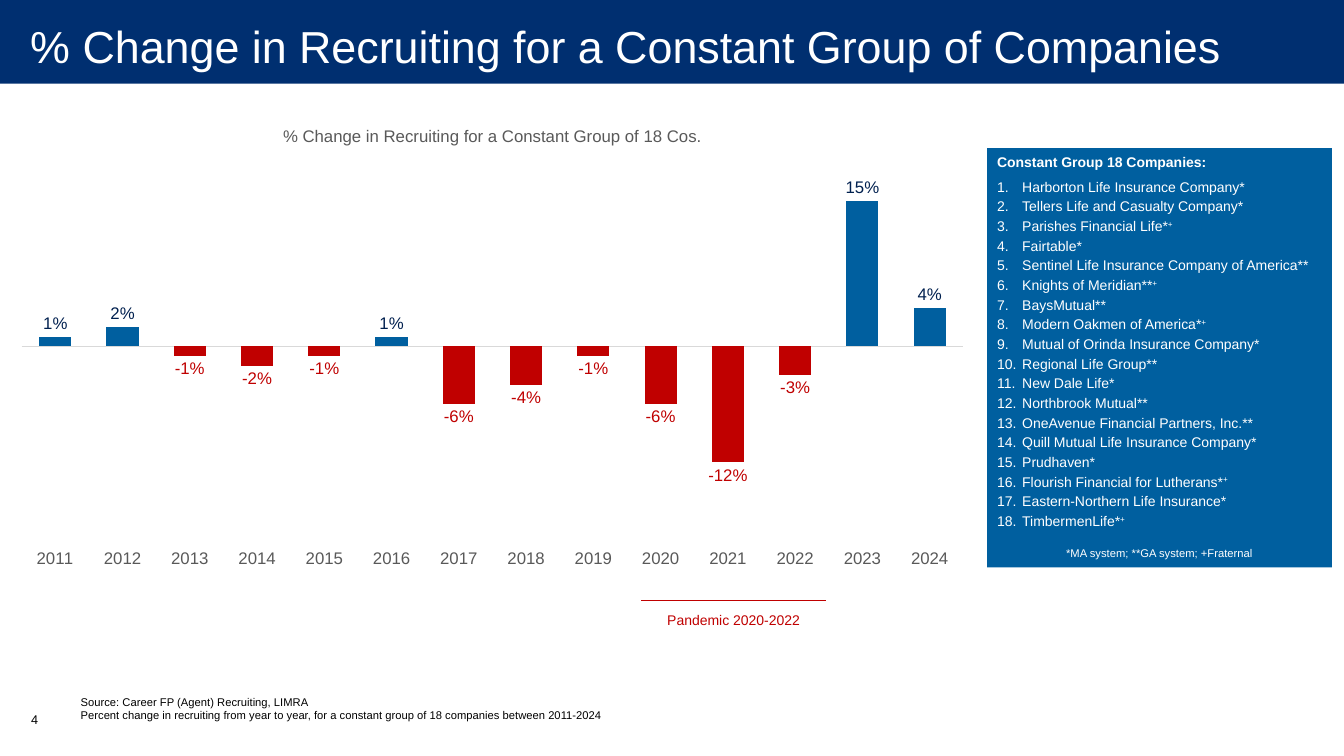
from lxml.etree import SubElement
from pptx import Presentation
from pptx.chart.data import CategoryChartData
from pptx.dml.color import RGBColor
from pptx.enum.chart import XL_CHART_TYPE, XL_LABEL_POSITION, XL_TICK_LABEL_POSITION, XL_TICK_MARK
from pptx.enum.shapes import MSO_CONNECTOR, MSO_SHAPE
from pptx.enum.text import MSO_ANCHOR, MSO_AUTO_SIZE, PP_ALIGN
from pptx.oxml import parse_xml
from pptx.oxml.ns import nsdecls, qn
from pptx.util import Inches, Pt

COLORS = {"navy": "002F70", "blue": "005F9F", "red": "C00000", "ink": "00204F",
          "gray": "595959", "rule": "D9D9D9", "white": "FFFFFF", "black": "000000"}
CHART_TITLE = "% Change in Recruiting for a Constant Group of 18 Cos."
FIRST_YEAR = 2011
CHANGES = [0.01, 0.02, -0.01, -0.02, -0.01, 0.01, -0.06,
           -0.04, -0.01, -0.06, -0.12, -0.03, 0.15, 0.04]
COMPANIES = [
    "Harborton Life Insurance Company*", "Tellers Life and Casualty Company*",
    "Parishes Financial Life*+", "Fairtable*",
    "Sentinel Life Insurance Company of America**", "Knights of Meridian**+",
    "BaysMutual**", "Modern Oakmen of America*+",
    "Mutual of Orinda Insurance Company*", "Regional Life Group**",
    "New Dale Life*", "Northbrook Mutual**",
    "OneAvenue Financial Partners, Inc.**", "Quill Mutual Life Insurance Company*",
    "Prudhaven*", "Flourish Financial for Lutherans*+",
    "Eastern-Northern Life Insurance*", "TimbermenLife*+",
]
SOURCE_LINES = [
    "Source: Career FP (Agent) Recruiting, LIMRA",
    "Percent change in recruiting from year to year, for a constant group of 18 companies between 2011-2024",
]


def color(name):
    """Return the named colour."""
    return RGBColor.from_string(COLORS[name])


def style(font, size, name, bold=False):
    """Set typeface, size, colour and weight."""
    font.name, font.size, font.bold = "Arial", Pt(size), bold
    font.color.rgb = color(name)


def place(shape, left, top, width, height):
    """Move and size a shape, in inches."""
    shape.left, shape.top = Inches(left), Inches(top)
    shape.width, shape.height = Inches(width), Inches(height)


def add_panel(page, left, top, width, height, fill):
    """Add a plain filled rectangle."""
    panel = page.shapes.add_shape(MSO_SHAPE.RECTANGLE, Inches(left), Inches(top),
                                  Inches(width), Inches(height))
    panel.shadow.inherit = False
    panel.fill.solid()
    panel.fill.fore_color.rgb = color(fill)
    panel.line.fill.background()
    return panel


def add_label(page, left, top, width, height, text, size, name, align=PP_ALIGN.LEFT):
    """Add a one-line text box."""
    box = page.shapes.add_textbox(Inches(left), Inches(top), Inches(width), Inches(height))
    box.text_frame.word_wrap = True
    para = box.text_frame.paragraphs[0]
    para.text, para.alignment = text, align
    style(para.font, size, name)


def fill_title(page):
    """Set the slide title over the navy band."""
    band = add_panel(page, 0, -0.03, 13.33, 0.86, "navy")
    page.shapes.title._element.addprevious(band._element)
    title = page.shapes.title
    place(title, 0, -0.03, 13.33, 0.97)
    frame = title.text_frame
    frame.text = "% Change in Recruiting for a Constant Group of Companies"
    frame.auto_size, frame.vertical_anchor = MSO_AUTO_SIZE.NONE, MSO_ANCHOR.MIDDLE
    frame.margin_left, frame.margin_right = Inches(0.3), Inches(0.2)
    frame.margin_top = frame.margin_bottom = 0
    frame.paragraphs[0].alignment = PP_ALIGN.LEFT
    style(frame.paragraphs[0].font, 32, "white")


def fill_source(page):
    """Set the source note in the body placeholder."""
    body = page.placeholders[1]
    place(body, 0.7, 6.72, 5.85, 0.49)
    frame = body.text_frame
    frame.text = "\n".join(SOURCE_LINES)
    frame.auto_size, frame.vertical_anchor = MSO_AUTO_SIZE.NONE, MSO_ANCHOR.BOTTOM
    for para in frame.paragraphs:
        settings = para._p.get_or_add_pPr()
        settings.set("marL", "0")
        settings.set("indent", "0")
        SubElement(settings, qn("a:buNone"))
        para.space_before = Pt(0)
        style(para.font, 8, "black")


def add_change_chart(page):
    """Add the column chart of yearly changes."""
    data = CategoryChartData(number_format="0%")
    data.categories = [str(FIRST_YEAR + step) for step in range(len(CHANGES))]
    data.add_series(CHART_TITLE, CHANGES)
    chart = page.shapes.add_chart(XL_CHART_TYPE.COLUMN_CLUSTERED, Inches(0.21), Inches(1.07),
                                  Inches(9.35), Inches(4.68), data).chart
    style(chart.font, 10, "black")
    chart.has_legend = False
    chart.has_title = True
    chart.chart_title.include_in_layout = False
    heading = chart.chart_title.text_frame
    heading.text = CHART_TITLE
    style(heading.paragraphs[0].font, 12, "gray")

    years = chart.category_axis
    years.tick_label_position = XL_TICK_LABEL_POSITION.LOW
    years.major_tick_mark = years.minor_tick_mark = XL_TICK_MARK.NONE
    years.format.line.color.rgb = color("rule")
    years.format.line.width = Pt(0.75)
    style(years.tick_labels.font, 12, "gray")

    scale = chart.value_axis
    scale.minimum_scale, scale.maximum_scale, scale.major_unit = -0.2, 0.2, 0.02
    scale.has_major_gridlines = False
    scale.visible = False

    color_columns(chart.plots[0])
    set_plot_area(chart)


def color_columns(plot):
    """Colour columns and labels by the sign of the change."""
    plot.gap_width = 109
    plot.vary_by_categories = False
    series = plot.series[0]
    series.invert_if_negative = False
    series.format.fill.solid()
    series.format.fill.fore_color.rgb = color("blue")
    labels = series.data_labels
    labels.show_value = True
    labels.number_format, labels.number_format_is_linked = "0%", False
    labels.position = XL_LABEL_POSITION.OUTSIDE_END
    style(labels.font, 12, "ink")
    for index, change in enumerate(CHANGES):
        point = series.points[index]
        style(point.data_label.font, 12, "red" if change < 0 else "ink")
        point.data_label.position = XL_LABEL_POSITION.OUTSIDE_END
        if change < 0:
            point.format.fill.solid()
            point.format.fill.fore_color.rgb = color("red")


def set_plot_area(chart):
    """Fix the inner plot area as shares of the chart."""
    area = chart._chartSpace.chart.plotArea
    for old in area.findall(qn("c:layout")):
        area.remove(old)
    sizes = "".join(f'<c:{tag} val="{value}"/>' for tag, value in (
        ("layoutTarget", "inner"), ("xMode", "edge"), ("yMode", "edge"),
        ("x", 0), ("y", 0.095), ("w", 1), ("h", 0.821)))
    area.insert(0, parse_xml(
        f'<c:layout {nsdecls("c")}><c:manualLayout>{sizes}</c:manualLayout></c:layout>'))


def add_company(frame, entry):
    """Add a numbered company, raising a closing plus sign."""
    para = frame.add_paragraph()
    settings = para._p.get_or_add_pPr()
    settings.set("marL", str(Inches(0.25)))
    settings.set("indent", str(-Inches(0.25)))
    SubElement(settings, qn("a:buFont"), typeface="+mj-lt")
    SubElement(settings, qn("a:buAutoNum"), type="arabicPeriod")
    para.alignment = PP_ALIGN.LEFT
    para.line_spacing = Pt(10)
    para.space_before = para.space_after = Pt(2)
    para.add_run().text = entry.removesuffix("+")
    if entry.endswith("+"):
        span = para.add_run()
        span.text = "+"
        span._r.get_or_add_rPr().set("baseline", "30000")
    style(para.font, 10, "white")


def add_company_panel(page):
    """Add the blue panel that lists the companies."""
    frame = add_panel(page, 9.79, 1.47, 3.42, 4.16, "blue").text_frame
    frame.word_wrap, frame.vertical_anchor = True, MSO_ANCHOR.TOP
    heading = frame.paragraphs[0]
    heading.text, heading.alignment = "Constant Group 18 Companies:", PP_ALIGN.LEFT
    heading.space_after = Pt(6)
    style(heading.font, 10, "white", bold=True)
    for entry in COMPANIES:
        add_company(frame, entry)
    key = frame.add_paragraph()
    key.text, key.alignment = "*MA system; **GA system; +Fraternal", PP_ALIGN.CENTER
    key.space_before = Pt(10)
    style(key.font, 8, "white")


def add_rule(page, left, right, top):
    """Add a thin red horizontal line."""
    rule = page.shapes.add_connector(MSO_CONNECTOR.STRAIGHT, Inches(left), Inches(top),
                                     Inches(right), Inches(top))
    rule.line.color.rgb = color("red")
    rule.line.width = Pt(0.75)
    SubElement(rule._element.spPr, qn("a:effectLst"))


def main():
    """Build and save the slide."""
    deck = Presentation()
    deck.slide_width, deck.slide_height = Inches(13.33), Inches(7.5)
    page = deck.slides.add_slide(deck.slide_layouts[1])
    fill_title(page)
    fill_source(page)
    add_change_chart(page)
    add_label(page, 0.21, 7.01, 0.49, 0.4, "4", 9, "black")
    add_company_panel(page)
    add_label(page, 6.47, 6.02, 1.61, 0.27, "Pandemic 2020-2022", 10, "red", PP_ALIGN.CENTER)
    add_rule(page, 6.36, 8.19, 5.96)
    deck.save("out.pptx")


if __name__ == "__main__":
    main()
